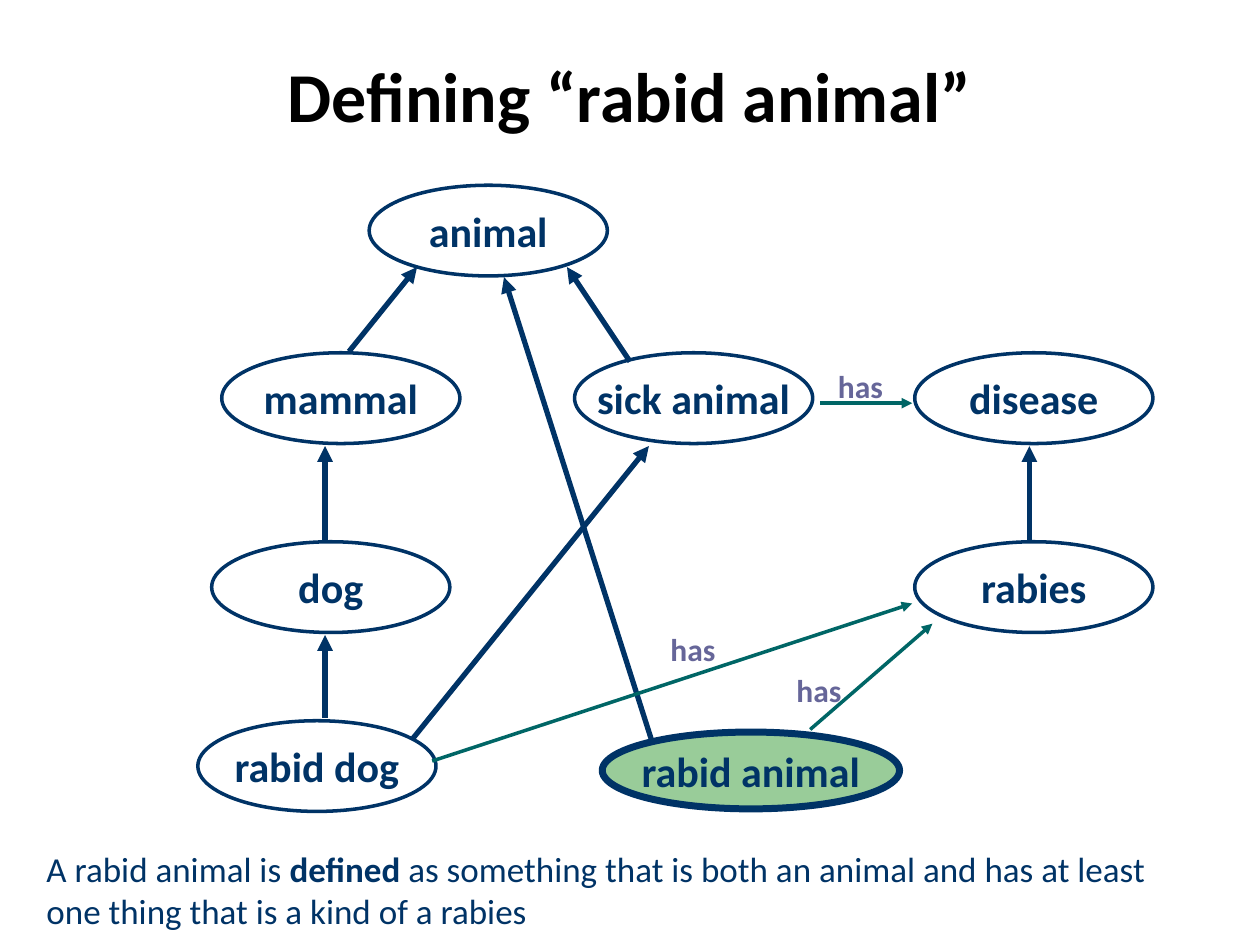
"""Build the concept hierarchy slide that defines a rabid animal."""
import pptx
import pptx.dml.color
import pptx.enum.shapes
import pptx.enum.text
import pptx.oxml
import pptx.oxml.ns
import pptx.util

Inches = pptx.util.Inches
Pt = pptx.util.Pt
RGBColor = pptx.dml.color.RGBColor
Align = pptx.enum.text.PP_ALIGN
Anchor = pptx.enum.text.MSO_ANCHOR

BLACK = RGBColor(0x00, 0x00, 0x00)
WHITE = RGBColor(0xFF, 0xFF, 0xFF)
NAVY = RGBColor(0x00, 0x33, 0x66)
TEAL = RGBColor(0x00, 0x66, 0x66)
PURPLE = RGBColor(0x66, 0x66, 0x99)
GREEN = RGBColor(0x99, 0xCC, 0x99)


def write(shape, spans, size, color, align=Align.CENTER, anchor=Anchor.TOP, wrap=True):
    frame = shape.text_frame
    frame.word_wrap = wrap
    frame.vertical_anchor = anchor
    para = frame.paragraphs[0]
    para.alignment = align
    for words, bold in spans:
        span = para.add_run()
        span.text = words
        span.font.name = "Calibri"
        span.font.size = Pt(size)
        span.font.bold = bold
        span.font.color.rgb = color
    return para


deck = pptx.Presentation()
deck.slide_width = Inches(10)
deck.slide_height = Inches(7.5)
page = deck.slides.add_slide(deck.slide_layouts[6])

title = page.shapes.add_textbox(Inches(0.35), Inches(0.28), Inches(9.29), Inches(0.86))
heading = write(title, [("Defining “rabid animal”", True)], 40, BLACK, anchor=Anchor.BOTTOM)
heading.line_spacing = 0.9

concepts = [
    ("animal", 2.93, 1.47, 1.89, 0.72, WHITE, 2),
    ("mammal", 1.76, 2.8, 1.89, 0.72, WHITE, 2),
    ("dog", 1.68, 4.3, 1.89, 0.72, WHITE, 2),
    ("sick animal", 4.56, 2.8, 1.89, 0.72, WHITE, 2),
    ("rabies", 7.26, 4.3, 1.89, 0.72, WHITE, 2),
    ("disease", 7.26, 2.8, 1.89, 0.72, WHITE, 2),
    ("rabid dog", 1.57, 5.72, 1.89, 0.72, None, 2),
    ("rabid animal", 4.78, 5.81, 2.36, 0.61, GREEN, 4),
]
for name, left, top, width, height, fill, weight in concepts:
    oval = page.shapes.add_shape(
        pptx.enum.shapes.MSO_SHAPE.OVAL,
        Inches(left), Inches(top), Inches(width), Inches(height))
    oval.shadow.inherit = False
    if fill is None:
        oval.fill.background()
    else:
        oval.fill.solid()
        oval.fill.fore_color.rgb = fill
    oval.line.color.rgb = NAVY
    oval.line.width = Pt(weight)
    write(oval, [(name, True)], 24, NAVY, anchor=Anchor.MIDDLE, wrap=False)

is_a_arrows = [
    (2.77, 2.79, 3.31, 2.12),
    (5, 2.87, 4.5, 2.12),
    (2.58, 4.29, 2.58, 3.54),
    (8.17, 4.29, 8.17, 3.54),
    (2.58, 5.7, 2.58, 5.04),
    (3.27, 5.87, 5.15, 3.54),
    (5.17, 5.87, 4, 2.2),
]
has_arrows = [
    (6.51, 3.2, 7.24, 3.2),
    (3.43, 6.04, 7.24, 4.79),
    (6.43, 5.79, 7.4, 4.95),
]
for arrows, color, weight in [(is_a_arrows, NAVY, 3), (has_arrows, TEAL, 2)]:
    for ends in arrows:
        arrow = page.shapes.add_connector(
            pptx.enum.shapes.MSO_CONNECTOR.STRAIGHT, *map(Inches, ends))
        arrow.line.color.rgb = color
        arrow.line.width = Pt(weight)
        head = pptx.oxml.parse_xml(
            f'<a:tailEnd {pptx.oxml.ns.nsdecls("a")} type="triangle"/>')
        arrow.line._get_or_add_ln().append(head)
        no_effects = pptx.oxml.parse_xml(f'<a:effectLst {pptx.oxml.ns.nsdecls("a")}/>')
        arrow._element.spPr.append(no_effects)

for left, top in [(6.41, 2.86), (5.08, 4.95), (6.08, 5.28)]:
    label = page.shapes.add_textbox(Inches(left), Inches(top), Inches(0.84), Inches(0.41))
    write(label, [("has", True)], 18, PURPLE)

definition = page.shapes.add_textbox(Inches(0.27), Inches(6.68), Inches(9.37), Inches(0.77))
write(definition, [
    ("A rabid animal is ", False),
    ("defined", True),
    (" as something that is both an animal and has at least one thing"
     " that is a kind of a rabies", False),
], 20, NAVY, align=Align.LEFT)

deck.save("out.pptx")
